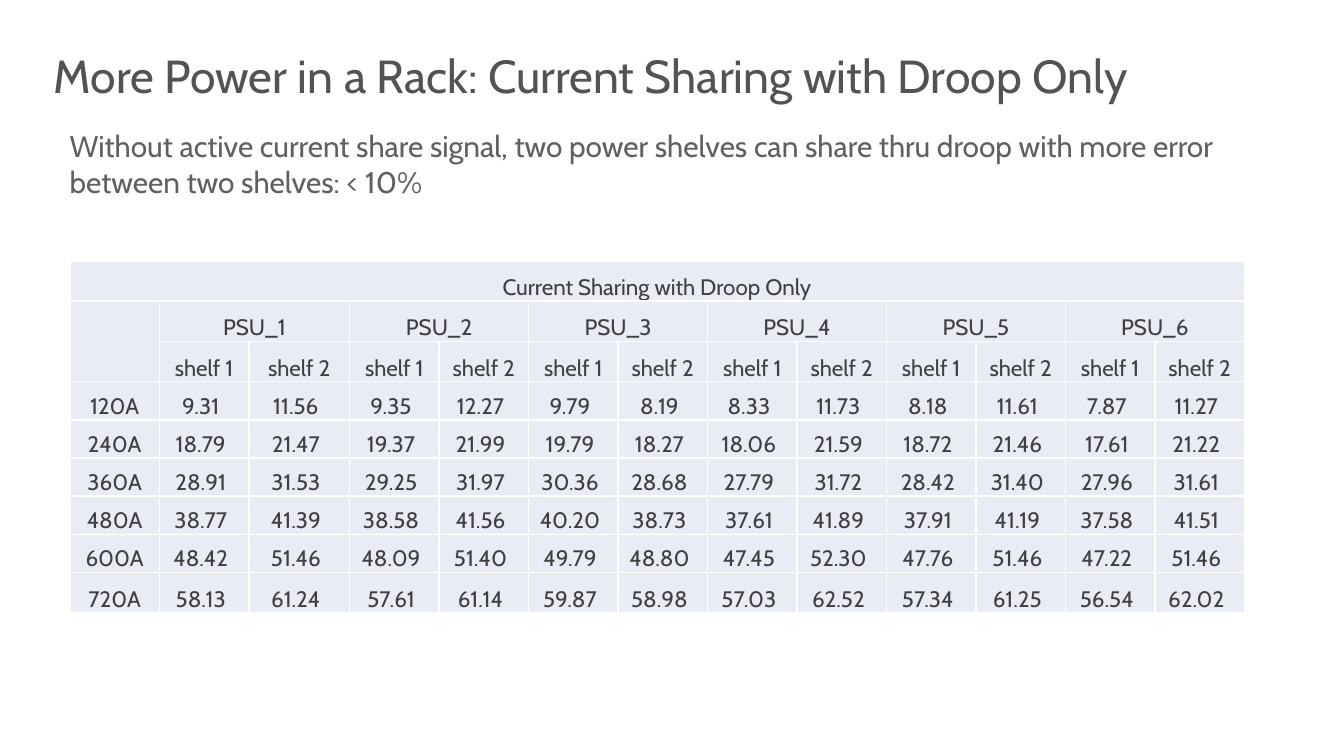
from lxml import etree
from pptx import Presentation
from pptx.dml.color import RGBColor
from pptx.enum.text import MSO_ANCHOR, PP_ALIGN
from pptx.oxml.ns import qn
from pptx.util import Inches, Pt

LEFT, CENTER = PP_ALIGN.LEFT, PP_ALIGN.CENTER
TOP, MIDDLE, BOTTOM = MSO_ANCHOR.TOP, MSO_ANCHOR.MIDDLE, MSO_ANCHOR.BOTTOM

FONT = "Cabin"
COLORS = {
    "title": "535353",
    "body": "5F6062",
    "cell": "404040",
    "fill": "E9EBF5",
    "border": "FFFFFF",
}
TITLE = "Current Sharing with Droop Only"
WIDTH, HEIGHT = 8.74, 2.62
WIDE, TALL = 0.75, 0.3
COL = (WIDTH - WIDE) / 12
ROW = (HEIGHT - 4 * TALL) / 5
COLS = [COL] * 2 + [WIDE] + [COL] * 10
ROWS = [TALL] * 3 + [ROW] * 5 + [TALL]
LOADS = {
    "120A": "9.31 11.56 9.35 12.27 9.79 8.19 8.33 11.73 8.18 11.61 7.87 11.27",
    "240A": "18.79 21.47 19.37 21.99 19.79 18.27 18.06 21.59 18.72 21.46 17.61 21.22",
    "360A": "28.91 31.53 29.25 31.97 30.36 28.68 27.79 31.72 28.42 31.40 27.96 31.61",
    "480A": "38.77 41.39 38.58 41.56 40.20 38.73 37.61 41.89 37.91 41.19 37.58 41.51",
    "600A": "48.42 51.46 48.09 51.40 49.79 48.80 47.45 52.30 47.76 51.46 47.22 51.46",
    "720A": "58.13 61.24 57.61 61.14 59.87 58.98 57.03 62.52 57.34 61.25 56.54 62.02",
}


def put_text(frame, text, size=12, color="cell", align=LEFT, spacing=None):
    para = frame.paragraphs[0]
    para.alignment = align
    if spacing:
        para.line_spacing = spacing
    run = para.add_run()
    run.text = text
    run.font.name = FONT
    run.font.size = Pt(size)
    run.font.color.rgb = RGBColor.from_string(COLORS[color])


def add_box(slide, text, left, top, width, height, anchor=TOP, **style):
    box = slide.shapes.add_textbox(
        Inches(left), Inches(top), Inches(width), Inches(height))
    frame = box.text_frame
    frame.word_wrap = True
    frame.vertical_anchor = anchor
    put_text(frame, text, **style)


def add_border(cell):
    props = cell._tc.get_or_add_tcPr()
    for index, side in enumerate(("lnL", "lnR", "lnT", "lnB")):
        line = etree.Element(qn(f"a:{side}"), w=str(Pt(1)))
        fill = etree.SubElement(line, qn("a:solidFill"))
        etree.SubElement(fill, qn("a:srgbClr"), val=COLORS["border"])
        props.insert(index, line)


def fill_cell(cell, text, right=0.01):
    cell.margin_left = cell.margin_top = Inches(0.01)
    cell.margin_right = Inches(right)
    cell.margin_bottom = 0
    cell.vertical_anchor = BOTTOM
    cell.fill.solid()
    cell.fill.fore_color.rgb = RGBColor.from_string(COLORS["fill"])
    add_border(cell)
    put_text(cell.text_frame, text, align=CENTER)


def table_rows():
    units = [name for n in range(1, 7) for name in (f"PSU_{n}", "")]
    rows = [[TITLE] + [""] * 12, [""] + units, [""] + ["shelf 1", "shelf 2"] * 6]
    return rows + [[load] + amps.split() for load, amps in LOADS.items()]


def add_grid(slide, left, top):
    table = slide.shapes.add_table(
        len(ROWS), len(COLS), Inches(left), Inches(top),
        Inches(WIDTH), Inches(HEIGHT)).table
    table.first_row = table.horz_banding = False
    for col, width in zip(table.columns, COLS):
        col.width = Inches(width)
    for row, height in zip(table.rows, ROWS):
        row.height = Inches(height)
    for r, texts in enumerate(table_rows()):
        for c, text in enumerate(texts):
            right = 0.06 if r > 2 and c else 0.01
            fill_cell(table.cell(r, c), text, right)
    table.cell(0, 0).merge(table.cell(0, 12))
    table.cell(1, 0).merge(table.cell(2, 0))
    for c in range(1, 13, 2):
        table.cell(1, c).merge(table.cell(1, c + 1))


def main():
    deck = Presentation()
    deck.slide_width, deck.slide_height = Inches(10), Inches(10 * 9 / 16)
    slide = deck.slides.add_slide(deck.slide_layouts[6])
    add_box(slide, f"More Power in a Rack: {TITLE}", 0.3, 0.27, 9.4, 0.63,
            anchor=MIDDLE, size=24.8, color="title", spacing=0.9)
    add_box(slide, "Without active current share signal, two power shelves can "
            "share thru droop with more error between two shelves: < 10%",
            0.42, 0.9, 8.74, 0.86, size=16, color="body")
    add_grid(slide, 0.52, 1.94)
    deck.save("out.pptx")


if __name__ == "__main__":
    main()
